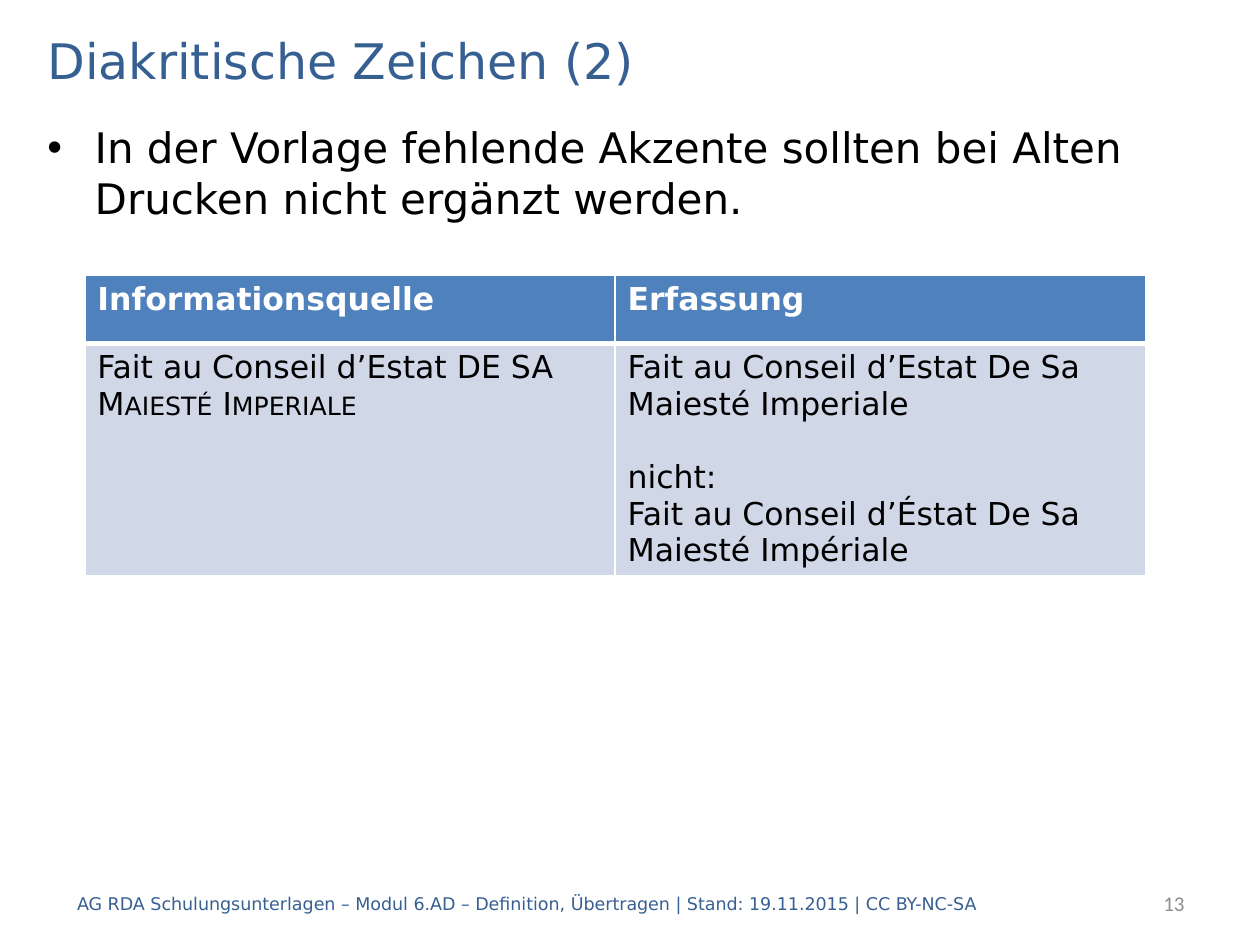
import dataclasses
import typing

import lxml.etree
import pptx
import pptx.dml.color
import pptx.enum.text
import pptx.oxml.ns
import pptx.util

Pt = pptx.util.Pt
ALIGN = pptx.enum.text.PP_ALIGN
ANCHOR = pptx.enum.text.MSO_ANCHOR
SANS = "DejaVu Sans"
COLORS = {
    "navy": "376092", "black": "000000", "grey": "8C8C8C",
    "white": "FFFFFF", "head": "4F81BD", "band": "D0D8E8",
}


@dataclasses.dataclass
class Style:
    size: float
    color: str
    font: str = SANS
    bold: bool = False


@dataclasses.dataclass
class Run:
    text: str
    small: bool = False


@dataclasses.dataclass
class Para:
    runs: list[Run]
    before: float = 0


@dataclasses.dataclass
class Label:
    box: tuple[float, float, float, float]
    text: str
    style: Style
    align: typing.Any = ALIGN.LEFT
    anchor: typing.Any = ANCHOR.MIDDLE


def line(text: str, before: float = 0) -> Para:
    return Para([Run(text)], before)


def write(frame: typing.Any, paras: list[Para], style: Style,
          align: typing.Any = ALIGN.LEFT) -> None:
    for i, item in enumerate(paras):
        para = frame.paragraphs[0] if i == 0 else frame.add_paragraph()
        para.alignment = align
        para.space_before = Pt(item.before)
        for part in item.runs:
            run = para.add_run()
            run.text = part.text
            font = run.font
            font.name, font.size, font.bold = style.font, Pt(style.size), style.bold
            font.color.rgb = pptx.dml.color.RGBColor.from_string(COLORS[style.color])
            if part.small:
                run._r.get_or_add_rPr().set("cap", "small")


def fill_box(shape: typing.Any, label: Label) -> None:
    shape.left, shape.top, shape.width, shape.height = map(Pt, label.box)
    frame = shape.text_frame
    frame.word_wrap = True
    frame.auto_size = pptx.enum.text.MSO_AUTO_SIZE.NONE
    frame.vertical_anchor = label.anchor
    write(frame, [line(label.text)], label.style, label.align)


def add_label(slide: typing.Any, label: Label) -> typing.Any:
    shape = slide.shapes.add_textbox(*map(Pt, label.box))
    fill_box(shape, label)
    return shape


def add_bullet(para: typing.Any, indent: float) -> None:
    props = para._p.get_or_add_pPr()
    props.set("marL", str(Pt(indent)))
    props.set("indent", str(-Pt(indent)))
    tag = pptx.oxml.ns.qn
    lxml.etree.SubElement(props, tag("a:buFont")).set("typeface", "Arial")
    lxml.etree.SubElement(props, tag("a:buChar")).set("char", "•")


def add_edge(cell: typing.Any, side: str, width: float) -> None:
    tag = pptx.oxml.ns.qn
    edge = lxml.etree.SubElement(cell._tc.get_or_add_tcPr(), tag(f"a:ln{side}"))
    edge.set("w", str(Pt(width)))
    solid = lxml.etree.SubElement(edge, tag("a:solidFill"))
    lxml.etree.SubElement(solid, tag("a:srgbClr")).set("val", COLORS["white"])


def add_grid(slide: typing.Any, left: float, top: float, width: float,
             heights: list[float], rows: list[list[list[Para]]]) -> None:
    table = slide.shapes.add_table(
        len(rows), len(rows[0]), Pt(left), Pt(top), Pt(width), Pt(sum(heights))).table
    for r, row in enumerate(rows):
        table.rows[r].height = Pt(heights[r])
        head = r == 0
        style = Style(18, "white" if head else "black", bold=head)
        for c, paras in enumerate(row):
            cell = table.cell(r, c)
            for side in "LRTB":
                thick = side == ("B" if head else "T")
                add_edge(cell, side, 3 if thick else 1)
            cell.fill.solid()
            cell.fill.fore_color.rgb = pptx.dml.color.RGBColor.from_string(
                COLORS["head" if head else "band"])
            write(cell.text_frame, paras, style)


def main() -> None:
    deck = pptx.Presentation()
    deck.slide_width, deck.slide_height = Pt(720), Pt(540)
    slide = deck.slides.add_slide(deck.slide_layouts[5])

    # Title
    fill_box(slide.shapes.title, Label(
        (20, 14.5, 680, 40), "Diakritische Zeichen (2)", Style(28, "navy")))

    # Rule
    body = add_label(slide, Label(
        (20, 66, 680, 430),
        "In der Vorlage fehlende Akzente sollten bei Alten Drucken nicht ergänzt werden.",
        Style(24, "black"), anchor=ANCHOR.TOP))
    rule = body.text_frame.paragraphs[0]
    rule.space_before = Pt(4.8)
    add_bullet(rule, 27)

    # Footer and page number
    add_label(slide, Label(
        (37, 502, 595, 28.5),
        "AG RDA Schulungsunterlagen – Modul 6.AD – Definition, Übertragen"
        " | Stand: 19.11.2015 | CC BY-NC-SA", Style(10, "navy")))
    add_label(slide, Label(
        (569.5, 502, 114.5, 28.5), "13", Style(12, "grey", "Calibri"), ALIGN.RIGHT))

    # Source and transcription
    source = Para([Run("Fait au Conseil d’Estat DE SA M"), Run("aiesté", True),
                   Run(" I"), Run("mperiale", True)])
    entry = [line("Fait au Conseil d’Estat De Sa Maiesté Imperiale"),
             line("nicht:", 21),
             line("Fait au Conseil d’Éstat De Sa Maiesté Impériale")]
    add_grid(slide, 48.5, 157, 606, [39.3, 132.3], [
        [[line("Informationsquelle")], [line("Erfassung")]],
        [[source], entry]])

    deck.save("out.pptx")


if __name__ == "__main__":
    main()
